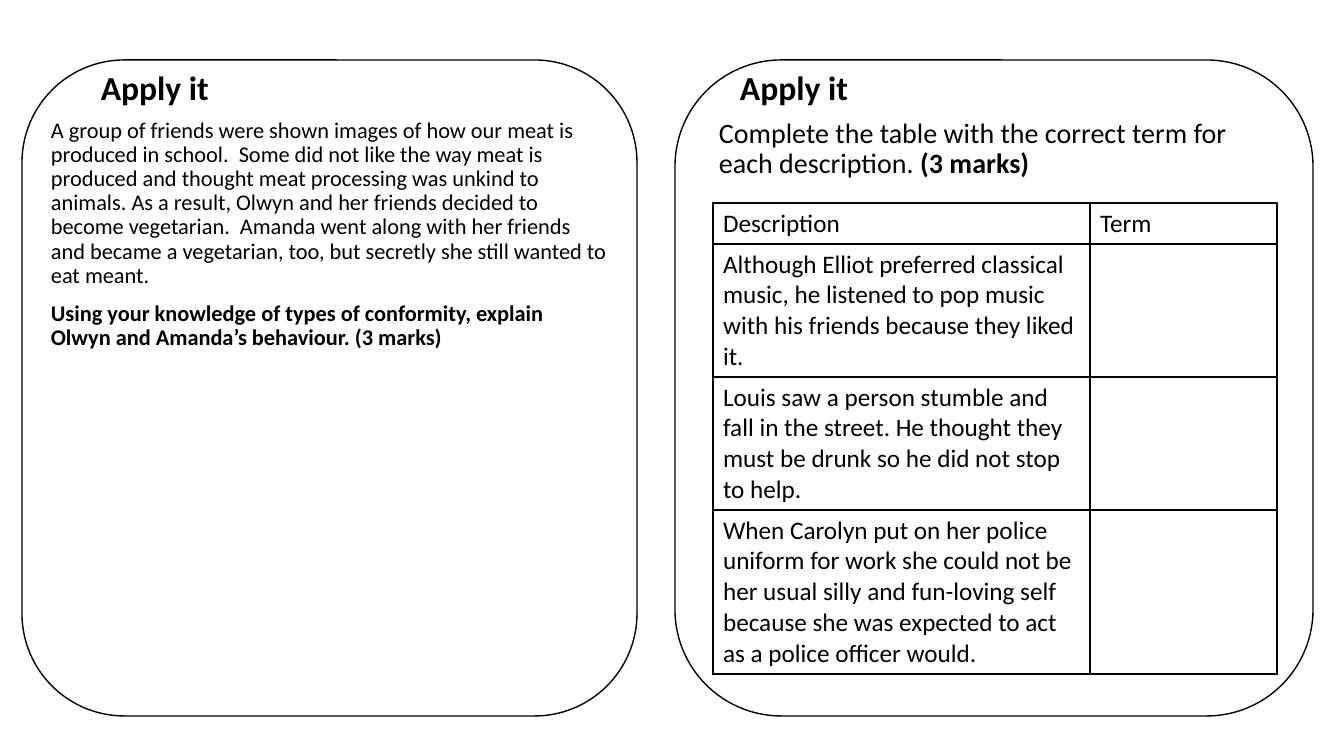
from lxml import etree
from pptx import Presentation
from pptx.dml.color import RGBColor
from pptx.enum.shapes import MSO_SHAPE
from pptx.enum.text import MSO_ANCHOR
from pptx.oxml.ns import qn
from pptx.util import Emu, Pt

PANELS = [(22, 60, 615, 656), (675, 60, 638, 656)]
HEADINGS = [(91, 60, 527, 53), (730, 60, 572, 53)]
HEADING = "Apply it"
SCENARIO_BOX = (41, 114, 577, 444)
SCENARIO = [
    [("A group of friends were shown images of how our meat is produced in school.  "
      "Some did not like the way meat is produced and thought meat processing was "
      "unkind to animals. As a result, Olwyn and her friends decided to become "
      "vegetarian.  Amanda went along with her friends and became a vegetarian, too, "
      "but secretly she still wanted to eat meant.", False)],
    [("Using your knowledge of types of conformity, explain Olwyn and Amanda’s "
      "behaviour. (3 marks)", True)],
]
TASK_BOX = (709, 114, 572, 78)
TASK = [[("Complete the table with the correct term for each description. ", False),
         ("(3 marks)", True)]]
TABLE_AT = (713, 203)
COLUMNS = [377, 187]
ROWS = [
    (41, "Description", "Term"),
    (133, "Although Elliot preferred classical music, he listened to pop music with "
          "his friends because they liked it.", ""),
    (133, "Louis saw a person stumble and fall in the street. He thought they must be "
          "drunk so he did not stop to help.", ""),
    (164, "When Carolyn put on her police uniform for work she could not be her usual "
          "silly and fun-loving self because she was expected to act as a police "
          "officer would.", ""),
]

FONT = "Calibri"
BLACK = RGBColor(0, 0, 0)
ROUNDED = MSO_SHAPE.ROUNDED_RECTANGLE
TOP, BOTTOM = MSO_ANCHOR.TOP, MSO_ANCHOR.BOTTOM


def px(n):
    return Emu(round(n * 914400 / 100.8))


def write(tf, paragraphs, size, spacing=None, before=None):
    for i, runs in enumerate(paragraphs):
        p = tf.paragraphs[0] if i == 0 else tf.add_paragraph()
        p.line_spacing = spacing
        p.space_before = before
        p.font.size = Pt(size)
        for text, bold in runs:
            r = p.add_run()
            r.text = text
            r.font.name = FONT
            r.font.size = Pt(size)
            r.font.bold = bold
            r.font.color.rgb = BLACK


def add_text(s, box, paragraphs, size, anchor=TOP):
    tf = s.shapes.add_textbox(*map(px, box)).text_frame
    tf.word_wrap = True
    tf.vertical_anchor = anchor
    write(tf, paragraphs, size, spacing=0.9, before=Pt(10))


def add_panel(s, box):
    sp = s.shapes.add_shape(ROUNDED, *map(px, box))
    sp.shadow.inherit = False
    sp.fill.background()
    sp.line.color.rgb = BLACK
    sp.line.width = Pt(1)


def add_borders(cell):
    tcPr = cell._tc.get_or_add_tcPr()
    for i, side in enumerate(("a:lnL", "a:lnR", "a:lnT", "a:lnB")):
        ln = etree.Element(qn(side), w=str(Pt(1)))
        fill = etree.SubElement(ln, qn("a:solidFill"))
        etree.SubElement(fill, qn("a:srgbClr"), val=str(BLACK))
        tcPr.insert(i, ln)


def add_terms_table(s):
    size = (sum(COLUMNS), sum(row[0] for row in ROWS))
    table = s.shapes.add_table(len(ROWS), len(COLUMNS),
                               *map(px, TABLE_AT + size)).table
    table.first_row = False
    table.horz_banding = False
    for column, width in zip(table.columns, COLUMNS):
        column.width = px(width)
    for row, (height, *texts) in zip(table.rows, ROWS):
        row.height = px(height)
        for cell, text in zip(row.cells, texts):
            cell.fill.background()
            add_borders(cell)
            write(cell.text_frame, [[(text, False)] if text else []], 18)


def main():
    prs = Presentation()
    prs.slide_width, prs.slide_height = px(1344), px(756)
    s = prs.slides.add_slide(prs.slide_layouts[6])
    for box in HEADINGS:
        add_text(s, box, [[(HEADING, True)]], 24, BOTTOM)
    add_text(s, SCENARIO_BOX, SCENARIO, 16)
    add_text(s, TASK_BOX, TASK, 20)
    for box in PANELS:
        add_panel(s, box)
    add_terms_table(s)
    prs.save("out.pptx")


if __name__ == "__main__":
    main()
